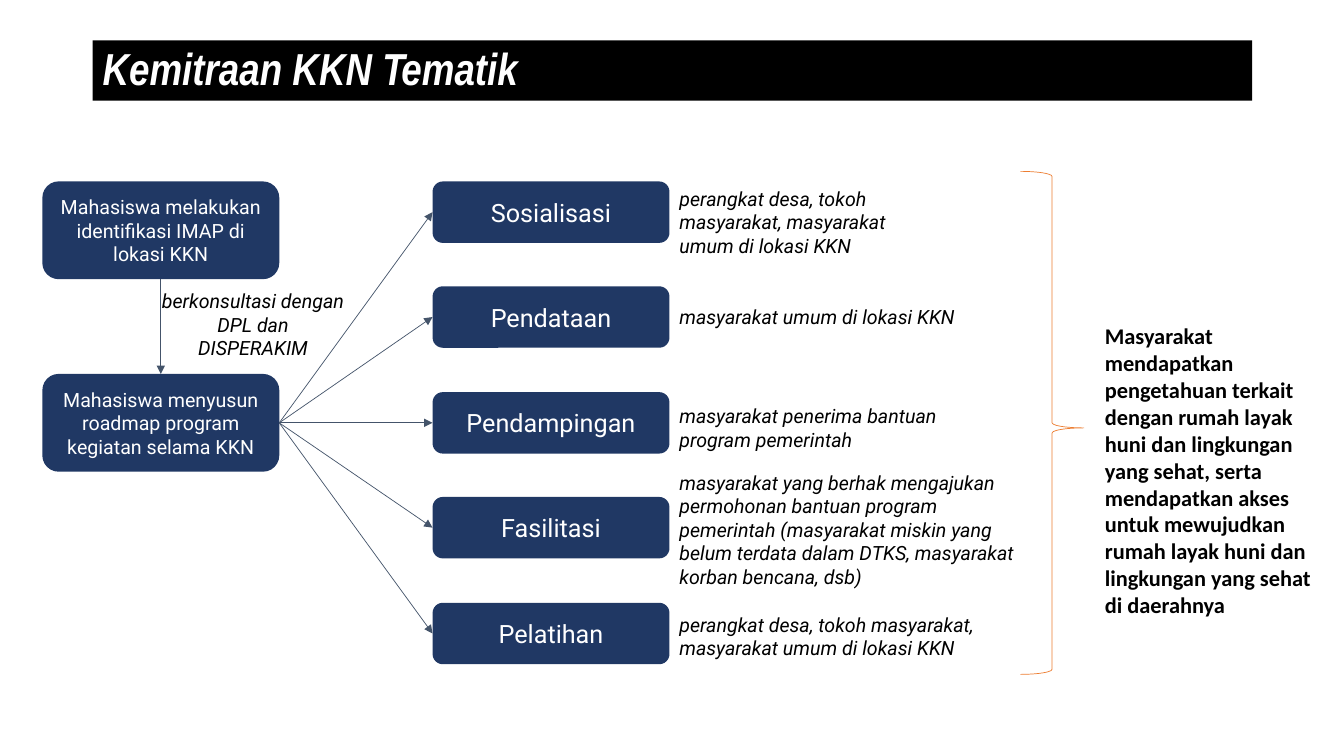
from dataclasses import dataclass

from lxml.etree import SubElement
from pptx import Presentation
from pptx.dml.color import RGBColor as Rgb
from pptx.enum.shapes import MSO_CONNECTOR as Conn, MSO_SHAPE as Kind
from pptx.enum.text import MSO_ANCHOR as Anchor, MSO_AUTO_SIZE as Fit, PP_ALIGN as Align
from pptx.oxml.ns import qn
from pptx.util import Pt

PX = 9144  # 100 px to the inch
TOP, LEFT, BOTTOM, RIGHT = range(4)


@dataclass(frozen=True)
class Theme:
    navy: str = "203864"
    slate: str = "44546A"
    orange: str = "ED7D31"
    black: str = "000000"
    white: str = "FFFFFF"
    body: str = "Roboto"
    head: str = "Arial Narrow"
    plain: str = "Calibri"
    title: int = 32
    label: int = 18
    result: int = 16
    note: int = 14
    hair: float = 0.5


class Deck:
    def __init__(self, theme, wide, high):
        self.theme = theme
        self.prs = Presentation()
        self.prs.slide_width, self.prs.slide_height = wide * PX, high * PX
        self.slide = self.prs.slides.add_slide(self.prs.slide_layouts[6])

    def label(self, shape, text, size, color, face=None, align=Align.LEFT,
              bold=False, italic=False):
        frame = shape.text_frame
        frame.word_wrap = True
        frame.text = text
        para = frame.paragraphs[0]
        para.alignment = align
        font = para.runs[0].font
        font.name, font.size = face or self.theme.body, Pt(size)
        font.bold, font.italic = bold, italic
        font.color.rgb = Rgb.from_string(color)
        return para

    def shape(self, kind, area, fill=None, line=None):
        item = self.slide.shapes.add_shape(kind, *(n * PX for n in area))
        item.shadow.inherit = False
        if fill:
            item.fill.solid()
            item.fill.fore_color.rgb = Rgb.from_string(fill)
        else:
            item.fill.background()
        if line:
            item.line.color.rgb = Rgb.from_string(line)
            item.line.width = Pt(self.theme.hair)
        else:
            item.line.fill.background()
        return item

    def title(self, text, area):
        bar = self.shape(Kind.RECTANGLE, area, self.theme.black)
        bar.text_frame.vertical_anchor = Anchor.MIDDLE
        para = self.label(bar, text, self.theme.title, self.theme.white,
                          self.theme.head, bold=True, italic=True)
        para.line_spacing = 0.9

    def box(self, text, area, size):
        item = self.shape(Kind.ROUNDED_RECTANGLE, area, self.theme.navy)
        item.text_frame.vertical_anchor = Anchor.MIDDLE
        self.label(item, text, size, self.theme.white, align=Align.CENTER)
        return item

    def text(self, text, area, size, **style):
        item = self.slide.shapes.add_textbox(*(n * PX for n in area))
        self.label(item, text, size, self.theme.black, **style)
        item.text_frame.auto_size = Fit.SHAPE_TO_FIT_TEXT

    def arrow(self, start, out, end, into):
        link = self.slide.shapes.add_connector(Conn.STRAIGHT, 0, 0, 0, 0)
        link.begin_connect(start, out)
        link.end_connect(end, into)
        link.line.color.rgb = Rgb.from_string(self.theme.slate)
        link.line.width = Pt(self.theme.hair)
        SubElement(link.get_or_add_ln(), qn("a:tailEnd"), type="triangle")
        SubElement(link.element.spPr, qn("a:effectLst"))

    def brace(self, area, curve, point):
        item = self.shape(Kind.RIGHT_BRACE, area, line=self.theme.orange)
        item.adjustments[0], item.adjustments[1] = curve, point


# Programs: name, partners, then top, width and height of the partner text
PROGRAMS = [
    ("Sosialisasi", "perangkat desa, tokoh masyarakat, masyarakat umum di lokasi KKN",
     180, 281, 81),
    ("Pendataan", "masyarakat umum di lokasi KKN", 298, 300, 34),
    ("Pendampingan", "masyarakat penerima bantuan program pemerintah", 396, 300, 57),
    ("Fasilitasi", "masyarakat yang berhak mengajukan permohonan bantuan program "
     "pemerintah (masyarakat miskin yang belum terdata dalam DTKS, masyarakat "
     "korban bencana, dsb)", 462, 366, 128),
    ("Pelatihan", "perangkat desa, tokoh masyarakat, masyarakat umum di lokasi KKN",
     603, 337, 57),
]
RESULT = ("Masyarakat mendapatkan pengetahuan terkait dengan rumah layak huni dan "
          "lingkungan yang sehat, serta mendapatkan akses untuk mewujudkan rumah "
          "layak huni dan lingkungan yang sehat di daerahnya")


def main():
    theme = Theme()
    deck = Deck(theme, 1333, 750)
    deck.title("Kemitraan KKN Tematik", (92, 40, 1150, 60))

    # Student steps
    survey = deck.box("Mahasiswa melakukan identifikasi IMAP di lokasi KKN",
                      (42, 180, 235, 97), theme.note)
    roadmap = deck.box("Mahasiswa menyusun roadmap program kegiatan selama KKN",
                       (42, 371, 235, 97), theme.note)
    deck.arrow(survey, BOTTOM, roadmap, TOP)
    deck.text("berkonsultasi dengan DPL dan DISPERAKIM", (150, 282, 202, 81),
              theme.note, align=Align.CENTER, italic=True)

    # Programs and their partners, evenly spaced
    first, last = 180, 598
    for i, (name, partners, top, wide, high) in enumerate(PROGRAMS):
        y = first + (last - first) * i // (len(PROGRAMS) - 1)
        program = deck.box(name, (429, y, 235, 61), theme.label)
        deck.arrow(roadmap, RIGHT, program, LEFT)
        deck.text(partners, (664, top, wide, high), theme.note, italic=True)

    # Result
    deck.brace((1012, 170, 63, 499), 0.08, 0.51)
    deck.text(RESULT, (1086, 315, 225, 306), theme.result,
              face=theme.plain, bold=True)

    deck.prs.save("out.pptx")


if __name__ == "__main__":
    main()
